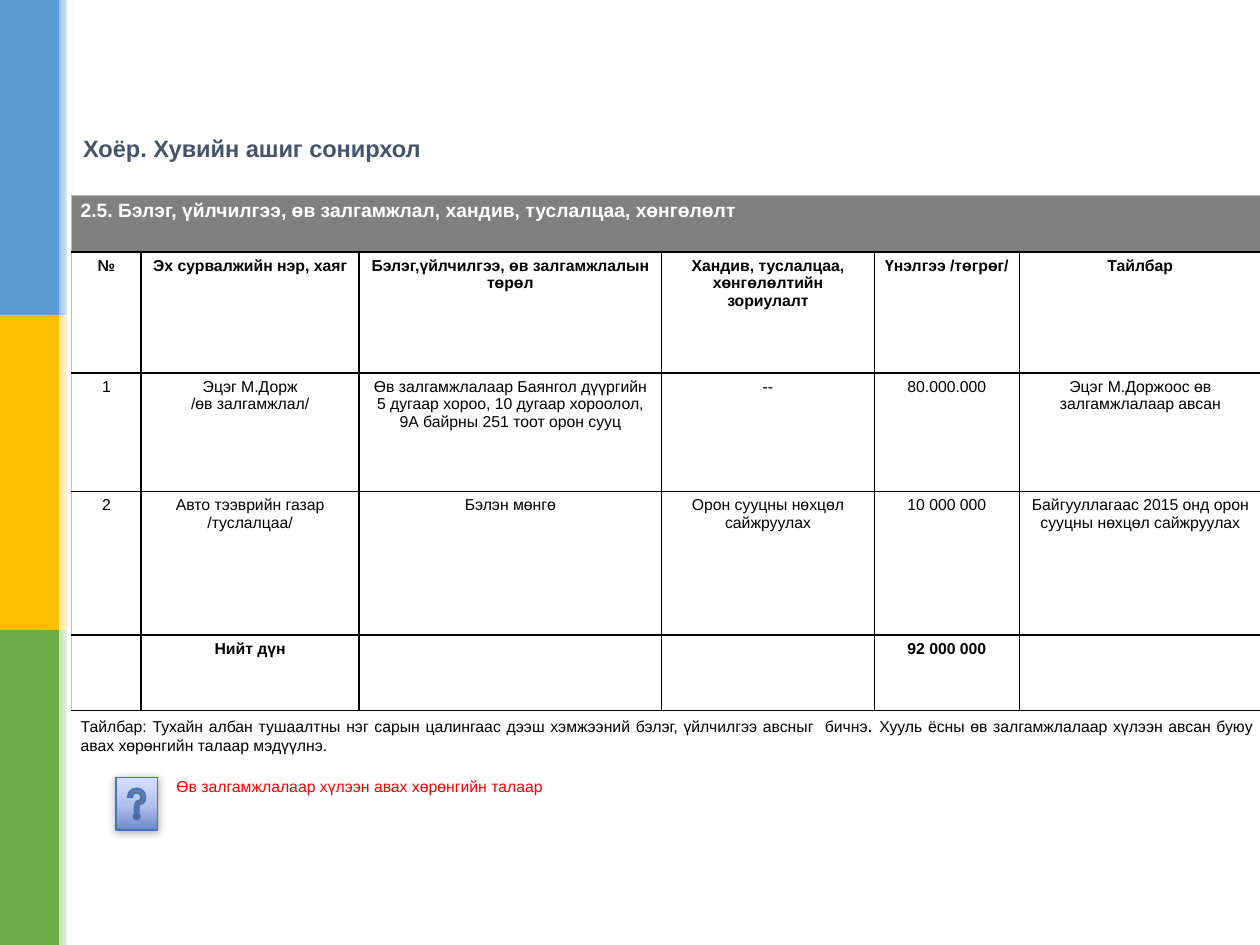
from copy import deepcopy

from lxml.etree import SubElement
from pptx import Presentation
from pptx.dml.color import RGBColor
from pptx.enum.shapes import MSO_SHAPE as Shape
from pptx.enum.text import MSO_ANCHOR as Anchor, PP_ALIGN as Align
from pptx.oxml.ns import qn
from pptx.util import Inches, Pt

FONT = "Arial"
BLACK = RGBColor(0, 0, 0)
WHITE = RGBColor(255, 255, 255)
RED = RGBColor(255, 0, 0)
GREY = RGBColor(0x80, 0x80, 0x80)
EDGE = RGBColor(0xBF, 0xBF, 0xBF)
NAVY = RGBColor(0x44, 0x54, 0x6A)
BLUE = RGBColor(0x44, 0x72, 0xC4)
BUTTON_DARK = RGBColor(0x6D, 0x89, 0xCB)
BUTTON_MID = RGBColor(0xB2, 0xC0, 0xEA)
BUTTON_LIGHT = RGBColor(0xD8, 0xE1, 0xFE)
# Side band colours, top to bottom: solid, start of fade
BANDS = [
    (RGBColor(0x5B, 0x9B, 0xD5), RGBColor(0x9D, 0xC3, 0xE6)),
    (RGBColor(0xFF, 0xC0, 0x00), RGBColor(0xFF, 0xE6, 0x99)),
    (RGBColor(0x70, 0xAD, 0x47), RGBColor(0xC5, 0xE0, 0xB4)),
]

TITLE = "Хоёр. Хувийн ашиг сонирхол"
SECTION = "2.5. Бэлэг, үйлчилгээ, өв залгамжлал, хандив, туслалцаа, хөнгөлөлт"
ROWS = [
    ["№", "Эх сурвалжийн нэр, хаяг", "Бэлэг,үйлчилгээ, өв залгамжлалын төрөл",
     "Хандив, туслалцаа, хөнгөлөлтийн зориулалт", "Үнэлгээ /төгрөг/", "Тайлбар"],
    ["1", "Эцэг М.Дорж\n/өв залгамжлал/",
     "Өв залгамжлалаар Баянгол дүүргийн 5 дугаар хороо, 10 дугаар хороолол, "
     "9А байрны 251 тоот орон сууц",
     "--", "80.000.000", "Эцэг М.Доржоос өв залгамжлалаар авсан"],
    ["2", "Авто тээврийн газар\n/туслалцаа/", "Бэлэн мөнгө",
     "Орон сууцны нөхцөл сайжруулах", "10 000 000",
     "Байгууллагаас 2015 онд орон сууцны нөхцөл сайжруулах"],
    ["", "Нийт дүн", "", "", "92 000 000", ""],
]
BOLD_ROWS = (1, 4)
NOTE = [
    ("Тайлбар: Тухайн албан тушаалтны нэг сарын цалингаас дээш хэмжээний бэлэг, "
     "үйлчилгээ авсныг  бичнэ", 9),
    (". ", 11),
    ("Хууль ёсны өв залгамжлалаар хүлээн авсан буюу авах хөрөнгийн талаар мэдүүлнэ.", 9),
]
HINT = "Өв залгамжлалаар хүлээн авах хөрөнгийн талаар"
COLUMN_WIDTHS = [0.55, 1.73, 2.4, 1.69, 1.15, 1.92]
ROW_HEIGHTS = [0.45, 0.96, 0.94, 1.14, 0.6, 0.71]


def add_block(page, left, top, width, height, color, kind=Shape.RECTANGLE):
    block = page.shapes.add_shape(
        kind, Inches(left), Inches(top), Inches(width), Inches(height))
    block.shadow.inherit = False
    block.fill.solid()
    block.fill.fore_color.rgb = color
    block.line.fill.background()
    return block


def set_gradient(shape, first, last, angle):
    shape.fill.gradient()
    shape.fill.gradient_angle = angle
    for stop, color, position in zip(shape.fill.gradient_stops, (first, last), (0, 1)):
        stop.color.rgb = color
        stop.position = position


def style(text, size, color=BLACK, bold=False):
    text.font.name = FONT
    text.font.size = Pt(size)
    text.font.bold = bold
    text.font.color.rgb = color


def write(cell, text, size=9, color=BLACK, bold=False, align=Align.CENTER):
    cell.text = text
    for para in cell.text_frame.paragraphs:
        para.alignment = align
        style(para, size, color, bold)


def set_borders(cell, borders):
    """borders: colour and width by side; sides must come before the fill."""
    properties = cell._tc.get_or_add_tcPr()
    for index, side in enumerate(("lnL", "lnR", "lnT", "lnB")):
        line = properties.makeelement(qn("a:" + side), {})
        properties.insert(index, line)
        if borders[side] is None:
            SubElement(line, qn("a:noFill"))
            continue
        color, width = borders[side]
        line.set("w", str(Pt(width)))
        fill = SubElement(line, qn("a:solidFill"))
        SubElement(fill, qn("a:srgbClr"), val=str(color))


def add_side_bands(page):
    height = 7.5 / len(BANDS)
    for index, (color, fade) in enumerate(BANDS):
        add_block(page, 0, index * height, 0.47, height, color)
        strip = add_block(page, 0.47, index * height, 0.12, height, fade)
        set_gradient(strip, fade, WHITE, 0)
    add_block(page, 0.53, 0, 0.04, 7.5, WHITE)


def add_title(page):
    title = page.shapes.title
    title.left, title.top = Inches(0.56), Inches(1.06)
    title.width, title.height = Inches(8), Inches(0.23)
    title.text = TITLE
    title.text_frame.vertical_anchor = Anchor.MIDDLE
    para = title.text_frame.paragraphs[0]
    para.alignment = Align.LEFT
    style(para, 13.5, NAVY, True)


def add_gift_table(page):
    last_row, last_column = len(ROW_HEIGHTS) - 1, len(COLUMN_WIDTHS) - 1
    table = page.shapes.add_table(
        last_row + 1, last_column + 1, Inches(0.57), Inches(1.55),
        Inches(sum(COLUMN_WIDTHS)), Inches(sum(ROW_HEIGHTS))).table
    table.first_row = table.horz_banding = False
    for column, width in zip(table.columns, COLUMN_WIDTHS):
        column.width = Inches(width)
    for row, height in zip(table.rows, ROW_HEIGHTS):
        row.height = Inches(height)

    # Cell fills, margins and borders
    ink, edge = (BLACK, 1), (EDGE, 0.5)
    for r, row in enumerate(table.rows):
        for c, cell in enumerate(row.cells):
            cell.margin_left = cell.margin_right = Inches(0.07)
            cell.margin_top = cell.margin_bottom = Inches(0.04)
            cell.fill.solid()
            cell.fill.fore_color.rgb = GREY if r == 0 else WHITE
            inner = None if r in (0, last_row) else ink
            outer = None if r == last_row else edge
            set_borders(cell, {
                "lnL": outer if c == 0 else inner,
                "lnR": outer if c == last_column else inner,
                "lnT": edge if r == 0 else ink,
                "lnB": None if r == last_row else ink,
            })

    # Full-width rows and body text
    for r in (0, last_row):
        table.cell(r, 0).merge(table.cell(r, last_column))
    write(table.cell(0, 0), SECTION, 11, WHITE, True, Align.LEFT)
    for r, texts in enumerate(ROWS, 1):
        for c, text in enumerate(texts):
            write(table.cell(r, c), text, bold=r in BOLD_ROWS)

    # Note and hint
    frame = table.cell(last_row, 0).text_frame
    note = frame.paragraphs[0]
    note.alignment = Align.JUSTIFY
    for text, size in NOTE:
        span = note.add_run()
        span.text = text
        style(span, size)
    hint = frame.add_paragraph()
    hint.text = HINT
    hint.space_before = Pt(13.5)
    hint._p.get_or_add_pPr().set("marL", str(Inches(0.76)))
    style(hint, 9, RED)


def add_help_button(page):
    button = add_block(page, 0.92, 6.17, 0.33, 0.42, BUTTON_MID, Shape.ACTION_BUTTON_HELP)
    set_gradient(button, BUTTON_DARK, BUTTON_LIGHT, 90)
    first = button._element.spPr.find(".//" + qn("a:gs"))
    middle = deepcopy(first)
    middle.set("pos", "48000")
    middle[0].set("val", str(BUTTON_MID))
    first.addnext(middle)
    button.line.color.rgb = BLUE
    button.line.width = Pt(1)
    effects = button._element.spPr.find(qn("a:effectLst"))
    shadow = SubElement(effects, qn("a:outerShdw"), blurRad=str(Pt(5)),
                        dist=str(Pt(1)), dir="5400000", rotWithShape="0")
    color = SubElement(shadow, qn("a:srgbClr"), val=str(BLACK))
    SubElement(color, qn("a:alpha"), val="32000")


def main():
    deck = Presentation()
    deck.slide_width, deck.slide_height = Inches(10), Inches(7.5)
    page = deck.slides.add_slide(deck.slide_layouts[5])
    add_side_bands(page)
    add_title(page)
    add_gift_table(page)
    add_help_button(page)
    deck.save("out.pptx")


if __name__ == "__main__":
    main()
